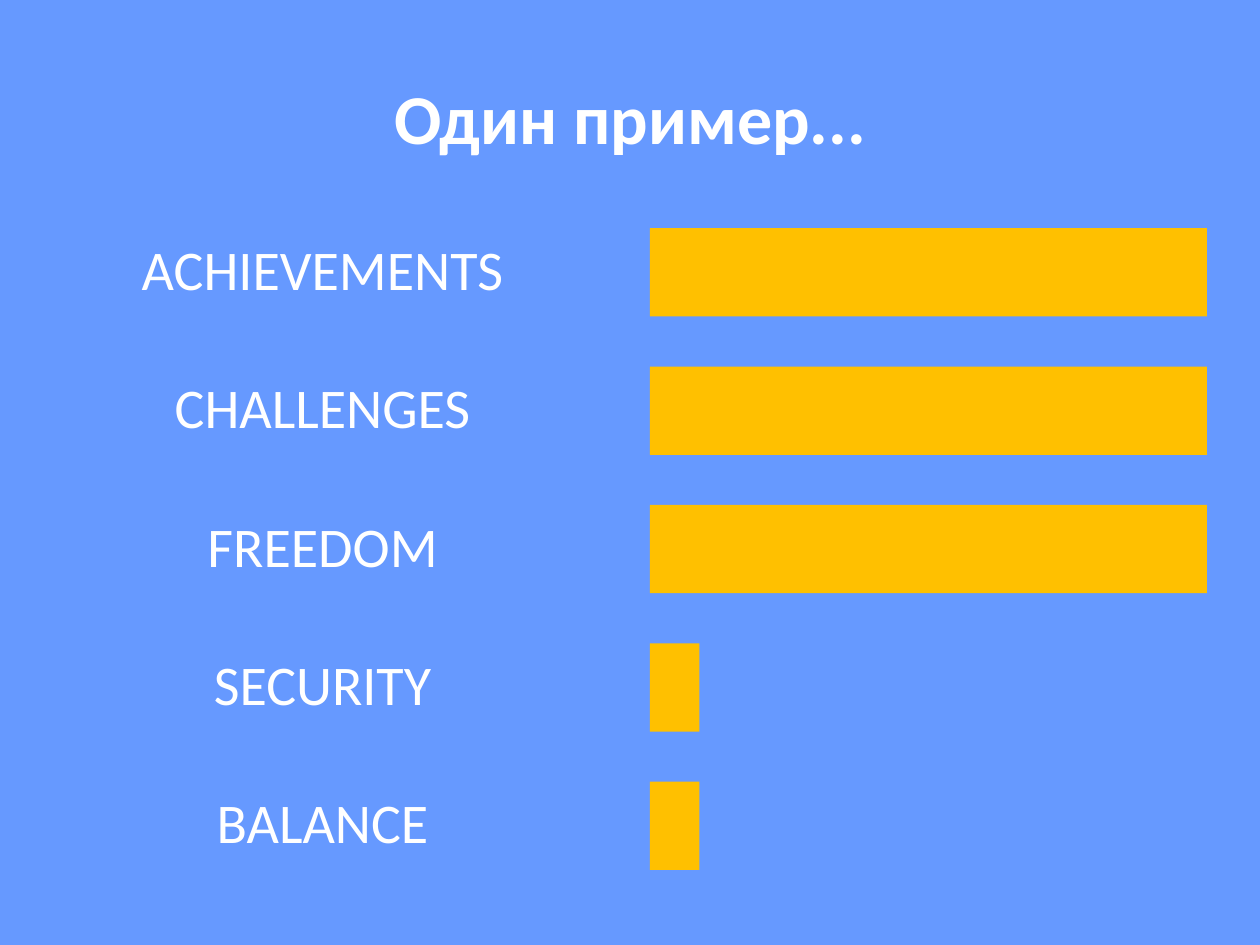
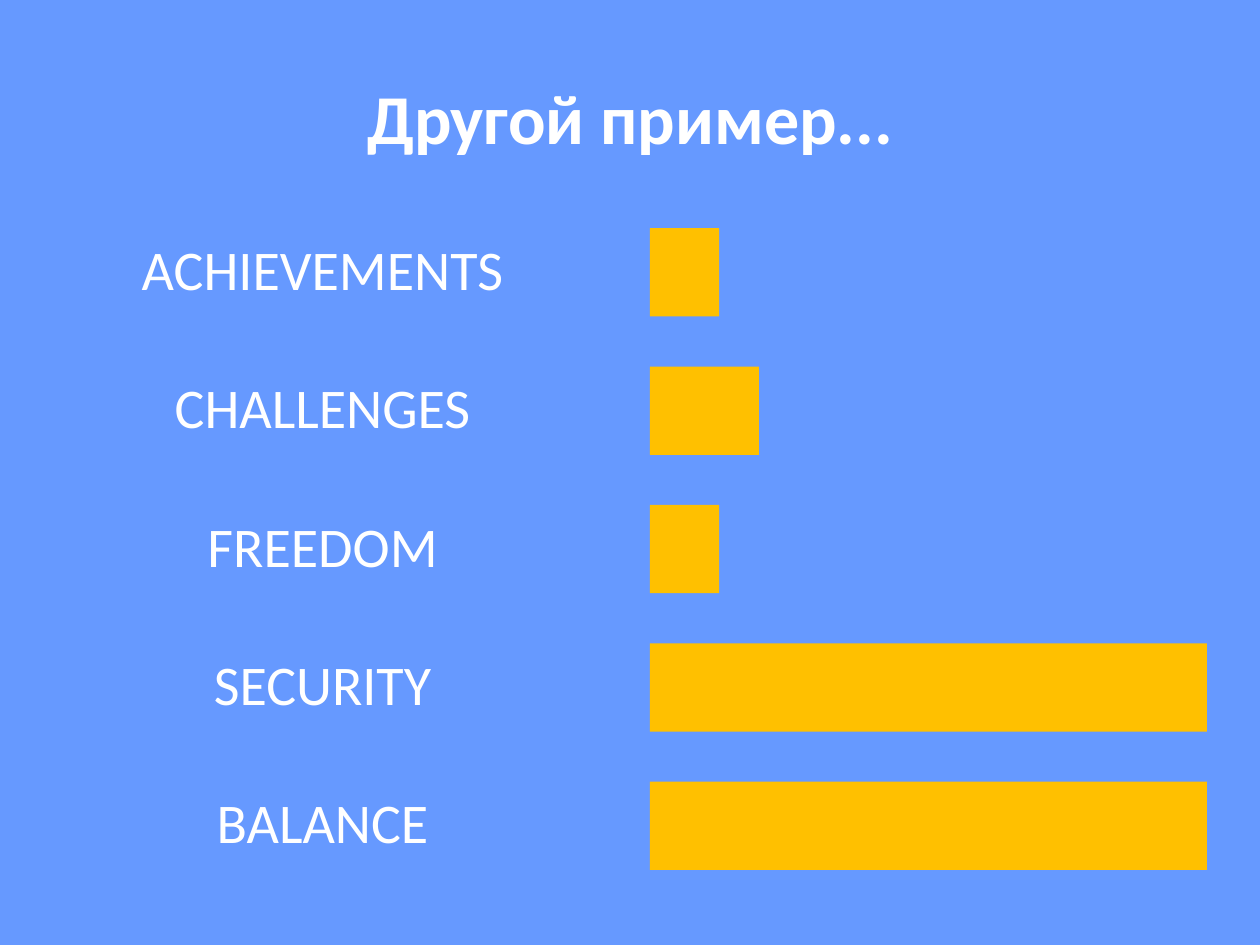
from pptx import Presentation
from pptx.dml.color import RGBColor
from pptx.enum import shapes, text
from pptx.util import Cm, Pt

BLUE, GOLD, WHITE = "6699FF", "FFC000", "FFFFFF"
FONT = "Calibri"
VALUES = ["ACHIEVEMENTS", "CHALLENGES", "FREEDOM", "SECURITY", "BALANCE"]
FULL = 11.23
TOP, STEP, HIGH = 4.6, 2.79, 1.78
CASES = [
    ("Один пример...", [FULL, FULL, FULL, 1, 1]),
    ("Другой пример...", [1.4, 2.2, 1.4, FULL, FULL]),
]


def paint(fill, color):
    fill.solid()
    fill.fore_color.rgb = RGBColor.from_string(color)


def write(frame, words, size, bold=False):
    frame.word_wrap = True
    frame.text = words
    line = frame.paragraphs[0]
    line.alignment = text.PP_ALIGN.CENTER
    line.font.name = FONT
    line.font.size = Pt(size)
    line.font.bold = bold
    line.font.color.rgb = RGBColor.from_string(WHITE)


def add_title(slide, words):
    title = slide.shapes.title
    title.left, title.top = Cm(1.27), Cm(0.76)
    title.width, title.height = Cm(22.86), Cm(3.18)
    title.text_frame.vertical_anchor = text.MSO_ANCHOR.MIDDLE
    write(title.text_frame, words, 40, True)


def add_label(slide, words, top):
    box = slide.shapes.add_textbox(Cm(0.89), Cm(top), Cm(FULL), Cm(HIGH))
    write(box.text_frame, words, 32)


def add_bar(slide, top, width):
    bar = slide.shapes.add_shape(
        shapes.MSO_SHAPE.RECTANGLE, Cm(13.1), Cm(top), Cm(width), Cm(HIGH))
    bar.shadow.inherit = False
    paint(bar.fill, GOLD)
    bar.line.fill.background()


def add_case(deck, title, widths):
    slide = deck.slides.add_slide(deck.slide_layouts[5])
    add_title(slide, title)
    for row, (value, width) in enumerate(zip(VALUES, widths)):
        top = TOP + row * STEP
        add_label(slide, value, top)
        add_bar(slide, top, width)


def main():
    deck = Presentation()
    deck.slide_width, deck.slide_height = Cm(25.4), Cm(19.05)
    paint(deck.slide_master.background.fill, BLUE)
    for title, widths in CASES:
        add_case(deck, title, widths)
    deck.save("out.pptx")


if __name__ == "__main__":
    main()
